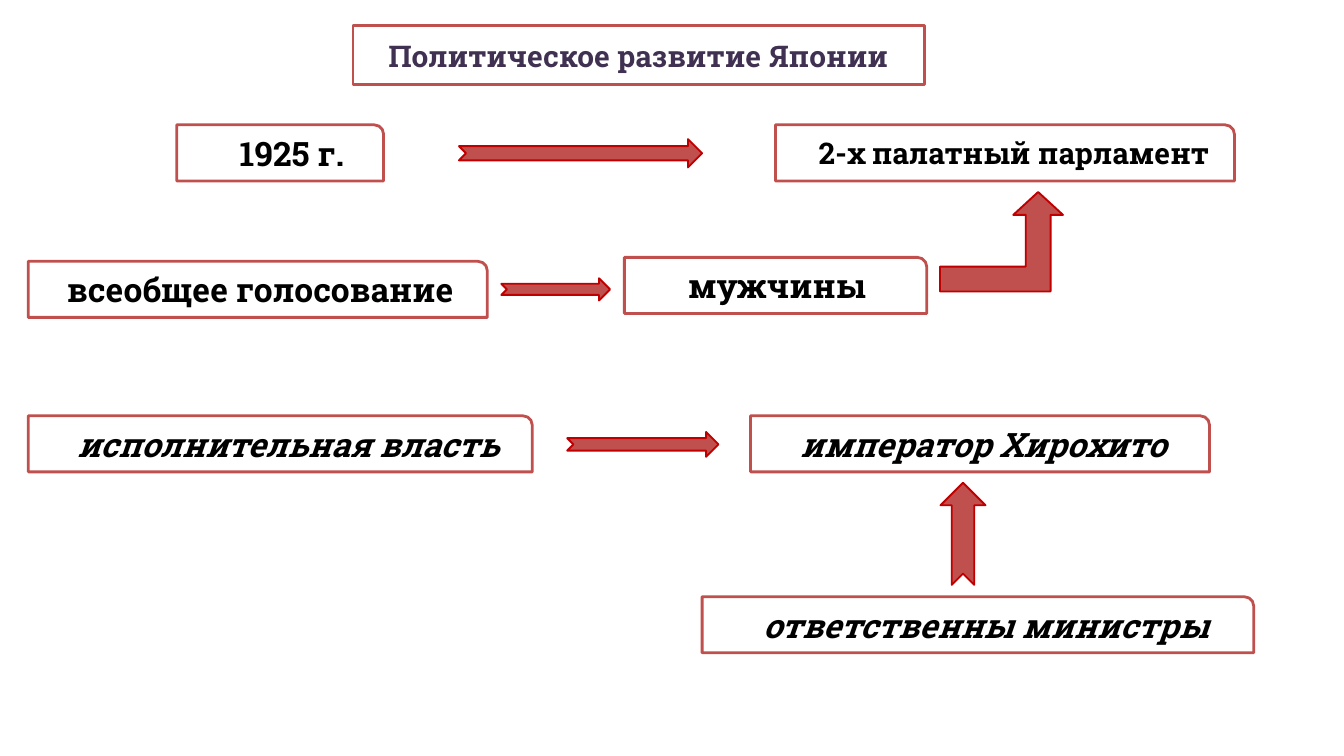
from pptx import Presentation
from pptx.dml.color import RGBColor
from pptx.enum.shapes import MSO_SHAPE as Form
from pptx.enum.text import MSO_ANCHOR as Anchor, MSO_AUTO_SIZE as Fit, PP_ALIGN as Align
from pptx.util import Cm, Pt
from lxml.etree import SubElement
from pptx.oxml.ns import qn

WHITE = RGBColor(0xFF, 0xFF, 0xFF)
BLACK = RGBColor(0, 0, 0)
RED = RGBColor(0xC0, 0x50, 0x4D)
DARK = RGBColor(0xC0, 0, 0)
PLUM = RGBColor(0x40, 0x31, 0x52)
FONT = "Roboto Slab"
HIGH = 2.12
PAD = 0.25


def paint(shape, fill, line, width):
    shape.fill.solid()
    shape.fill.fore_color.rgb = fill
    shape.line.color.rgb = line
    shape.line.width = Pt(width)


def write(shape, text, size, color, shift=0, slant=False):
    frame = shape.text_frame
    frame.word_wrap = True
    frame.auto_size = Fit.NONE
    frame.vertical_anchor = Anchor.MIDDLE
    frame.margin_left = Cm(PAD + shift)
    frame.margin_right = Cm(PAD)
    frame.text = text
    par = frame.paragraphs[0]
    par.alignment = Align.CENTER
    font = par.font
    font.name = FONT
    font.size = Pt(size)
    font.bold = True
    font.italic = slant
    font.color.rgb = color


def add_title(slide, text):
    title = slide.shapes.title
    title.left, title.top = Cm(13.34), Cm(0.97)
    title.width, title.height = Cm(21.59), Cm(2.24)
    geom = SubElement(title.element.spPr, qn("a:prstGeom"), prst="round1Rect")
    SubElement(geom, qn("a:avLst"))
    paint(title, WHITE, RED, 3)
    write(title, text, 32, PLUM)


def add_box(slide, left, top, width, text, shift, size=36, slant=False):
    box = slide.shapes.add_shape(Form.ROUND_1_RECTANGLE, Cm(left), Cm(top), Cm(width), Cm(HIGH))
    box.shadow.inherit = False
    paint(box, WHITE, RED, 3)
    write(box, text, size, BLACK, shift, slant)


def add_arrow(slide, left, top, width, height, form=Form.NOTCHED_RIGHT_ARROW, turn=0):
    arrow = slide.shapes.add_shape(form, Cm(left), Cm(top), Cm(width), Cm(height))
    arrow.shadow.inherit = False
    arrow.rotation = turn
    paint(arrow, RED, DARK, 2)
    return arrow


def main():
    deck = Presentation()
    deck.slide_width, deck.slide_height = Cm(50.8), Cm(28.58)
    slide = deck.slides.add_slide(deck.slide_layouts[5])

    add_title(slide, "Политическое развитие Японии")

    add_box(slide, 6.68, 4.72, 7.82, "1925 г.", 1)
    add_arrow(slide, 17.35, 5.26, 9.19, 1.07)
    add_box(slide, 29.31, 4.72, 17.35, "2-х палатный парламент", 0.8, size=32)

    add_box(slide, 1.07, 9.88, 17.35, "всеобщее голосование", 0.3)
    add_arrow(slide, 18.95, 10.52, 4.11, 0.84)
    add_box(slide, 23.6, 9.73, 11.43, "мужчины", 0.2)
    bend = add_arrow(slide, 35.53, 7.26, 4.65, 3.76, Form.BENT_UP_ARROW)
    bend.adjustments[2] = 0.23

    add_box(slide, 1.07, 15.72, 19.05, "исполнительная власть", 0.7, slant=True)
    add_arrow(slide, 21.44, 16.33, 5.72, 0.94)
    add_box(slide, 28.37, 15.72, 17.35, "император Хирохито", 0.35, slant=True)

    add_arrow(slide, 34.47, 19.33, 3.86, 1.7, turn=270)
    add_box(slide, 26.54, 22.56, 20.85, "ответственны министры", 0.7, slant=True)

    deck.save("out.pptx")


if __name__ == "__main__":
    main()
